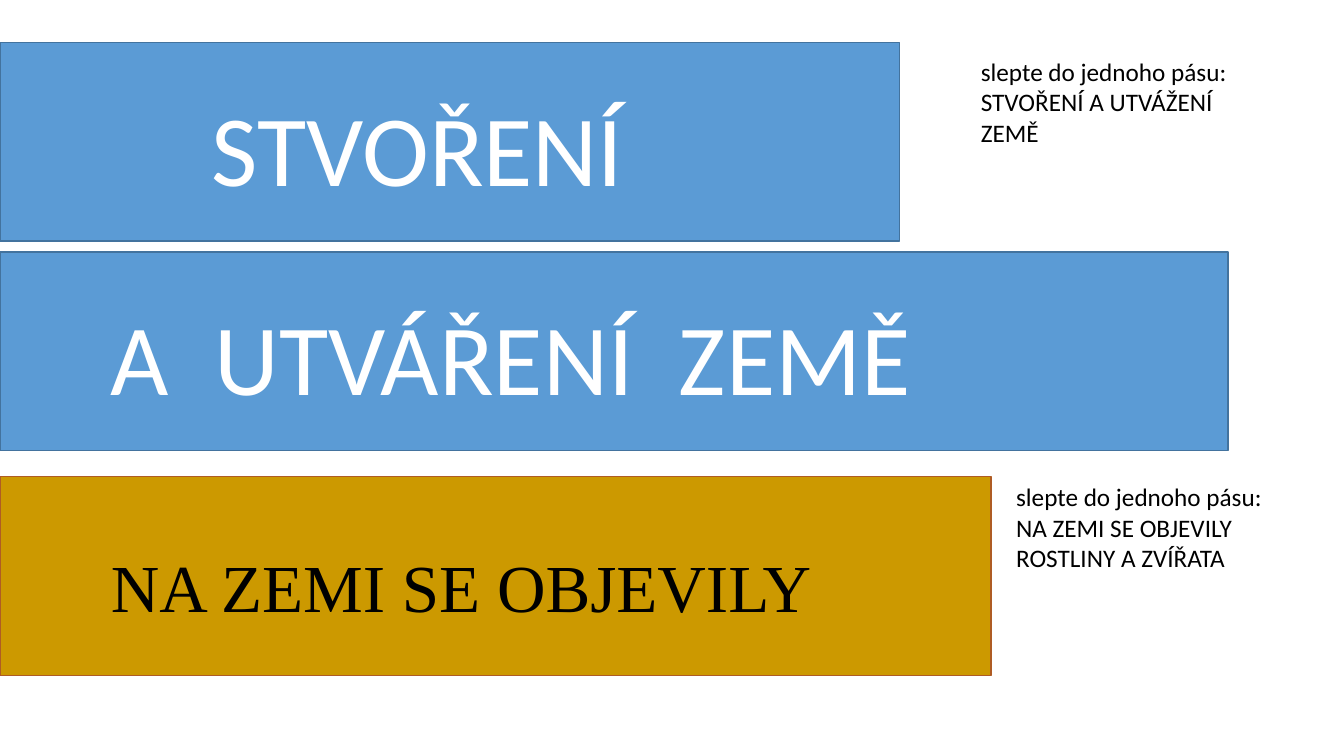
from pptx import Presentation
from pptx.dml.color import RGBColor
from pptx.enum.shapes import MSO_SHAPE
from pptx.enum.text import MSO_ANCHOR, MSO_AUTO_SIZE, PP_ALIGN
from pptx.util import Inches, Pt

RECT = MSO_SHAPE.RECTANGLE
MIDDLE = MSO_ANCHOR.MIDDLE
GROW = MSO_AUTO_SIZE.SHAPE_TO_FIT_TEXT
LEFT = PP_ALIGN.LEFT

BAND_H = 1.97
INSET = 0.1
TAB = 1  # headings are indented by whole tab stops
BLUE = ("5B9BD5", "43739E")
OCHRE = ("CC9900", "AF5C24")


def color(value):
    return RGBColor.from_string(value)


def add_run(p, text, size, font, hex_color):
    p.alignment = LEFT
    r = p.add_run()
    r.text = text
    r.font.size = Pt(size)
    r.font.name = font
    r.font.color.rgb = color(hex_color)


def add_band(slide, top, width, colors, tabs, text, size, font, text_color,
             top_inset=0.05):
    """Strip from the left edge with one heading; returns its paragraph."""
    sp = slide.shapes.add_shape(RECT, 0, Inches(top), Inches(width), Inches(BAND_H))
    sp.shadow.inherit = False
    fill, line = colors
    sp.fill.solid()
    sp.fill.fore_color.rgb = color(fill)
    sp.line.color.rgb = color(line)
    sp.line.width = Pt(1)
    tf = sp.text_frame
    tf.word_wrap = True
    tf.vertical_anchor = MIDDLE
    tf.margin_left = Inches(INSET + tabs * TAB)
    tf.margin_top = Inches(top_inset)
    p = tf.paragraphs[0]
    add_run(p, text, size, font, text_color)
    return p


def add_note(slide, left, top, lines):
    """Instruction beside a strip, one paragraph per line."""
    sp = slide.shapes.add_textbox(Inches(left), Inches(top), Inches(2.86), Inches(1.01))
    tf = sp.text_frame
    tf.word_wrap = True
    tf.auto_size = GROW
    for i, line in enumerate(lines):
        p = tf.add_paragraph() if i else tf.paragraphs[0]
        add_run(p, line, 18, "Calibri", "000000")


def main():
    prs = Presentation()
    prs.slide_width, prs.slide_height = Inches(13.33), Inches(7.5)
    slide = prs.slides.add_slide(prs.slide_layouts[6])

    # Blue strips: creation and shaping of the Earth
    for top, width, tabs, text in ((0.42, 8.92, 2, "STVOŘENÍ"),
                                   (2.5, 12.18, 1, "A  UTVÁŘENÍ  ZEMĚ")):
        p = add_band(slide, top, width, BLUE, tabs, text, 72, "Calibri", "FFFFFF")
        p.line_spacing = 1.07
        p.space_after = Pt(8)

    # Ochre strip: its heading sits a little below the middle
    add_band(slide, 4.73, 9.83, OCHRE, 1, "NA ZEMI SE OBJEVILY", 48,
             "Times New Roman", "000000", top_inset=0.24)

    # Gluing instructions
    heading = "slepte do jednoho pásu:"
    add_note(slide, 9.63, 0.51, (heading, "STVOŘENÍ A UTVÁŽENÍ ZEMĚ"))
    add_note(slide, 9.98, 4.73, (heading, "NA ZEMI SE OBJEVILY ROSTLINY A ZVÍŘATA"))

    prs.save("out.pptx")


if __name__ == "__main__":
    main()
